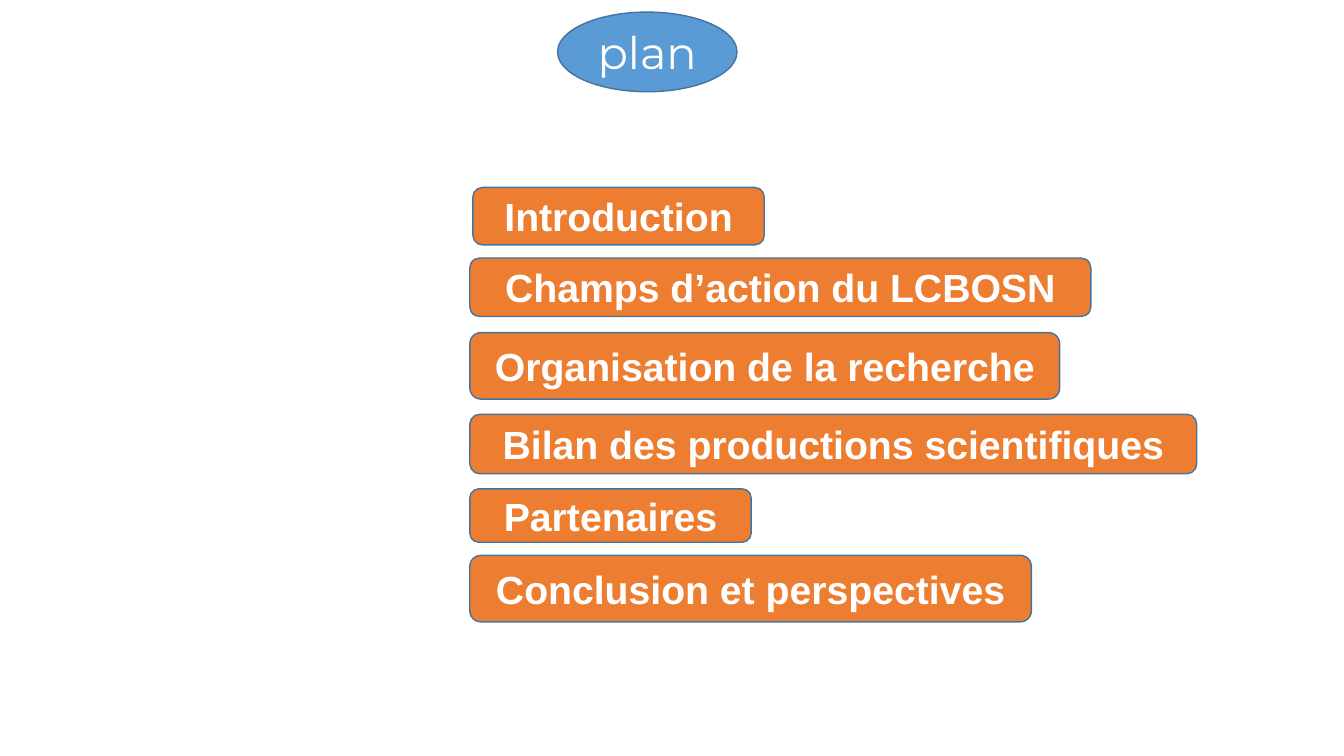
"""Build the plan slide: a title ellipse above six topic bars."""
from dataclasses import dataclass

from pptx import Presentation
from pptx.dml.color import RGBColor as RGB
from pptx.enum.shapes import MSO_SHAPE as SHAPE
from pptx.enum.text import MSO_ANCHOR as ANCHOR, PP_ALIGN as ALIGN
from pptx.slide import Slide
from pptx.util import Inches, Pt


@dataclass(frozen=True)
class Theme:
    """Colours, fonts and sizes of the slide."""
    blue: RGB = RGB(0x5B, 0x9B, 0xD5)
    orange: RGB = RGB(0xED, 0x7D, 0x31)
    outline: RGB = RGB(0x43, 0x73, 0x9E)
    white: RGB = RGB(0xFF, 0xFF, 0xFF)
    title_font: str = "Montserrat"
    topic_font: str = "Arial"
    title_size: int = 32
    topic_size: int = 28
    line_width: int = 1


@dataclass(frozen=True)
class Label:
    """A shape with its place and centred text."""
    text: str
    left: float
    top: float
    width: float
    height: float
    is_title: bool = False


THEME = Theme()
BAR_LEFT = 4.66
LABELS = [
    Label("plan", 5.53, 0.12, 1.78, 0.79, is_title=True),
    Label("Introduction", 4.69, 1.86, 2.89, 0.57),
    Label("Champs d’action du LCBOSN", BAR_LEFT, 2.56, 6.16, 0.58),
    Label("Organisation de la recherche", BAR_LEFT, 3.3, 5.85, 0.66),
    Label("Bilan des productions scientifiques", BAR_LEFT, 4.11, 7.21, 0.59),
    Label("Partenaires", BAR_LEFT, 4.85, 2.79, 0.53),
    Label("Conclusion et perspectives", BAR_LEFT, 5.51, 5.57, 0.66),
]


def add_label(s: Slide, label: Label) -> None:
    """Draw one label as a title ellipse or a topic bar."""
    kind = SHAPE.OVAL if label.is_title else SHAPE.ROUNDED_RECTANGLE
    sp = s.shapes.add_shape(kind, Inches(label.left), Inches(label.top),
                            Inches(label.width), Inches(label.height))
    sp.shadow.inherit = False
    sp.fill.solid()
    sp.fill.fore_color.rgb = THEME.blue if label.is_title else THEME.orange
    sp.line.color.rgb = THEME.outline
    sp.line.width = Pt(THEME.line_width)

    tf = sp.text_frame
    tf.word_wrap = True
    tf.vertical_anchor = ANCHOR.MIDDLE
    p = tf.paragraphs[0]
    p.alignment = ALIGN.CENTER
    r = p.add_run()
    r.text = label.text
    r.font.name = THEME.title_font if label.is_title else THEME.topic_font
    r.font.size = Pt(THEME.title_size if label.is_title else THEME.topic_size)
    r.font.bold = not label.is_title
    r.font.color.rgb = THEME.white


def main() -> None:
    """Create the slide and save it."""
    prs = Presentation()
    prs.slide_width, prs.slide_height = Inches(13.33), Inches(7.5)
    s = prs.slides.add_slide(prs.slide_layouts[6])
    s.background.fill.solid()
    s.background.fill.fore_color.rgb = THEME.white
    for label in LABELS:
        add_label(s, label)
    prs.save("out.pptx")


if __name__ == "__main__":
    main()
